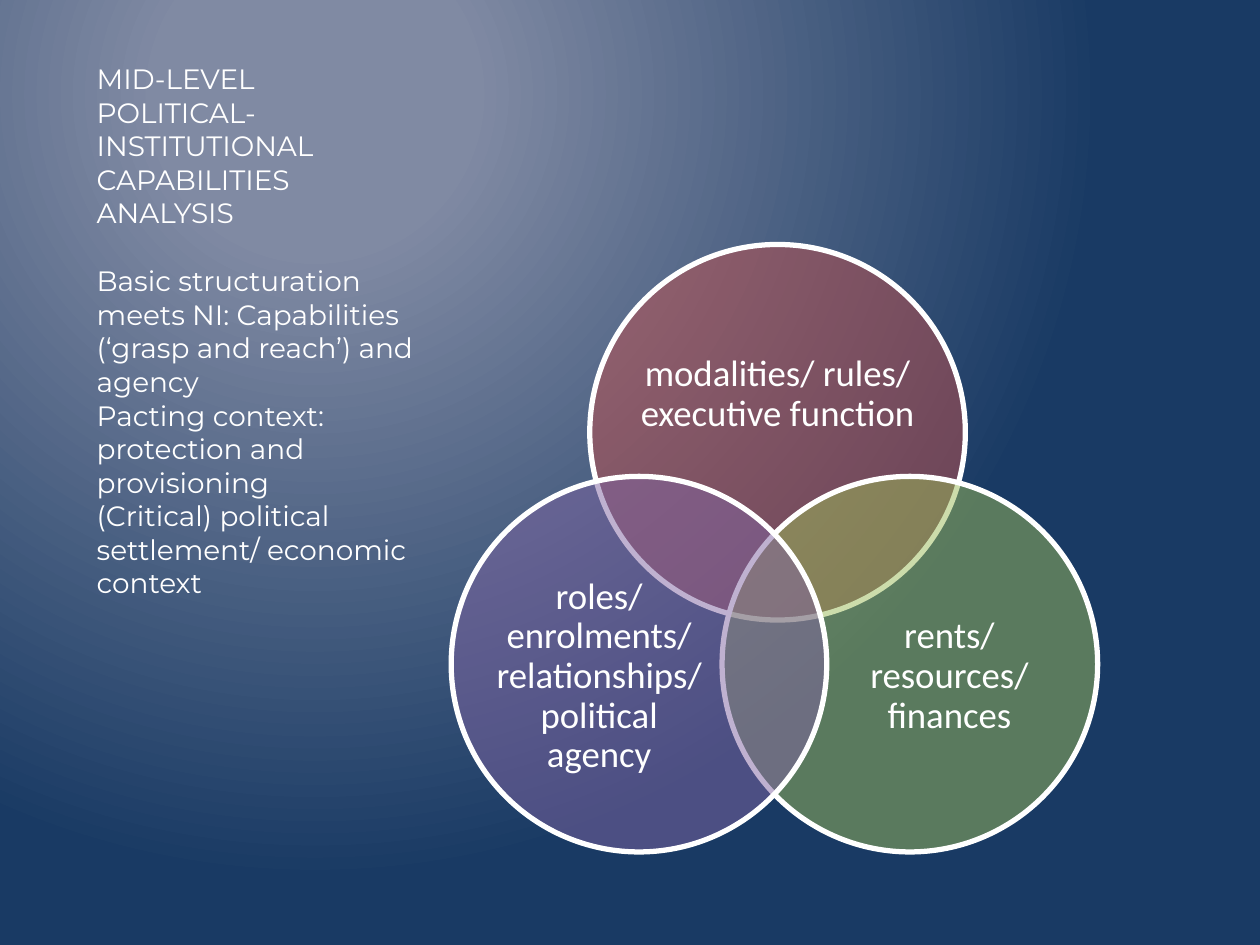
from lxml.etree import SubElement
from pptx import Presentation
from pptx.dml.color import RGBColor
from pptx.enum.shapes import MSO_SHAPE
from pptx.enum.text import MSO_ANCHOR, PP_ALIGN
from pptx.oxml.ns import qn
from pptx.util import Pt

WHITE = "FFFFFF"
DIAMETER = 214.6
LOWER_TOP = 272.2
LOWER_LABEL = (327.6, 128.9, 118.1)  # top, width, height

# circle left and top, colour, label box, label
CIRCLES = [
    (337, 139.7, "C0504D", (365.8, 177.1, 157, 96.5),
     "modalities/ rules/ executive function"),
    (412.6, LOWER_TOP, "9BBB59", (478.1, *LOWER_LABEL),
     "rents/ resources/ finances"),
    (257.8, LOWER_TOP, "8064A2", (277.9, *LOWER_LABEL),
     "roles/ enrolments/ relationships/ political agency"),
]

HEADING = "MID-LEVEL POLITICAL-INSTITUTIONAL CAPABILITIES ANALYSIS"
POINTS = [
    "Basic structuration meets NI: Capabilities (‘grasp and reach’) and agency",
    "Pacting context: protection and provisioning",
    "(Critical) political settlement/ economic context",
]


def set_color(color_format, hex_color):
    color_format.rgb = RGBColor.from_string(hex_color)


def set_background(slide):
    """Radial gradient centred in the upper left of the slide."""
    fill = slide.background.fill
    fill.gradient()
    stops = zip(fill.gradient_stops, [(0.2, "808AA3"), (1, "193A64")])
    for stop, (position, hex_color) in stops:
        stop.position = position
        set_color(stop.color, hex_color)
    gradient = slide.element.find(".//" + qn("a:gradFill"))
    gradient.remove(gradient.find(qn("a:lin")))
    radial = SubElement(gradient, qn("a:path"), {"path": "circle"})
    SubElement(radial, qn("a:fillToRect"),
               {"l": "50000", "t": "20000", "r": "100000", "b": "100000"})


def add_circle(slide, left, top, hex_color):
    circle = slide.shapes.add_shape(
        MSO_SHAPE.OVAL, Pt(left), Pt(top), Pt(DIAMETER), Pt(DIAMETER))
    circle.shadow.inherit = False
    circle.fill.solid()
    set_color(circle.fill.fore_color, hex_color)
    color = circle.fill._xPr.find(".//" + qn("a:srgbClr"))
    SubElement(color, qn("a:alpha"), {"val": "50000"})
    set_color(circle.line.color, WHITE)
    circle.line.width = Pt(3)


def add_text(slide, box, text, font_name, size):
    frame = slide.shapes.add_textbox(*map(Pt, box)).text_frame
    frame.word_wrap = True
    frame.text = text
    for paragraph in frame.paragraphs:
        for run in paragraph.runs:
            run.font.name = font_name
            run.font.size = Pt(size)
            set_color(run.font.color, WHITE)
    return frame


def add_label(slide, box, text):
    frame = add_text(slide, box, text, "Calibri", 21)
    frame.vertical_anchor = MSO_ANCHOR.MIDDLE
    frame.margin_left = frame.margin_right = 0
    frame.margin_top = frame.margin_bottom = 0
    frame.paragraphs[0].alignment = PP_ALIGN.CENTER
    frame.paragraphs[0].line_spacing = 0.9


def main():
    presentation = Presentation()
    presentation.slide_width = Pt(720)
    presentation.slide_height = Pt(540)
    slide = presentation.slides.add_slide(presentation.slide_layouts[6])
    set_background(slide)

    for left, top, hex_color, label_box, label in CIRCLES:
        add_circle(slide, left, top, hex_color)
        add_label(slide, label_box, label)

    analysis = add_text(slide, (48.2, 31.7, 199.5, 246.2),
                        "\n".join([HEADING, *POINTS]), "Montserrat", 16)
    analysis.paragraphs[0].space_after = Pt(19.5)

    presentation.save("out.pptx")


if __name__ == "__main__":
    main()
